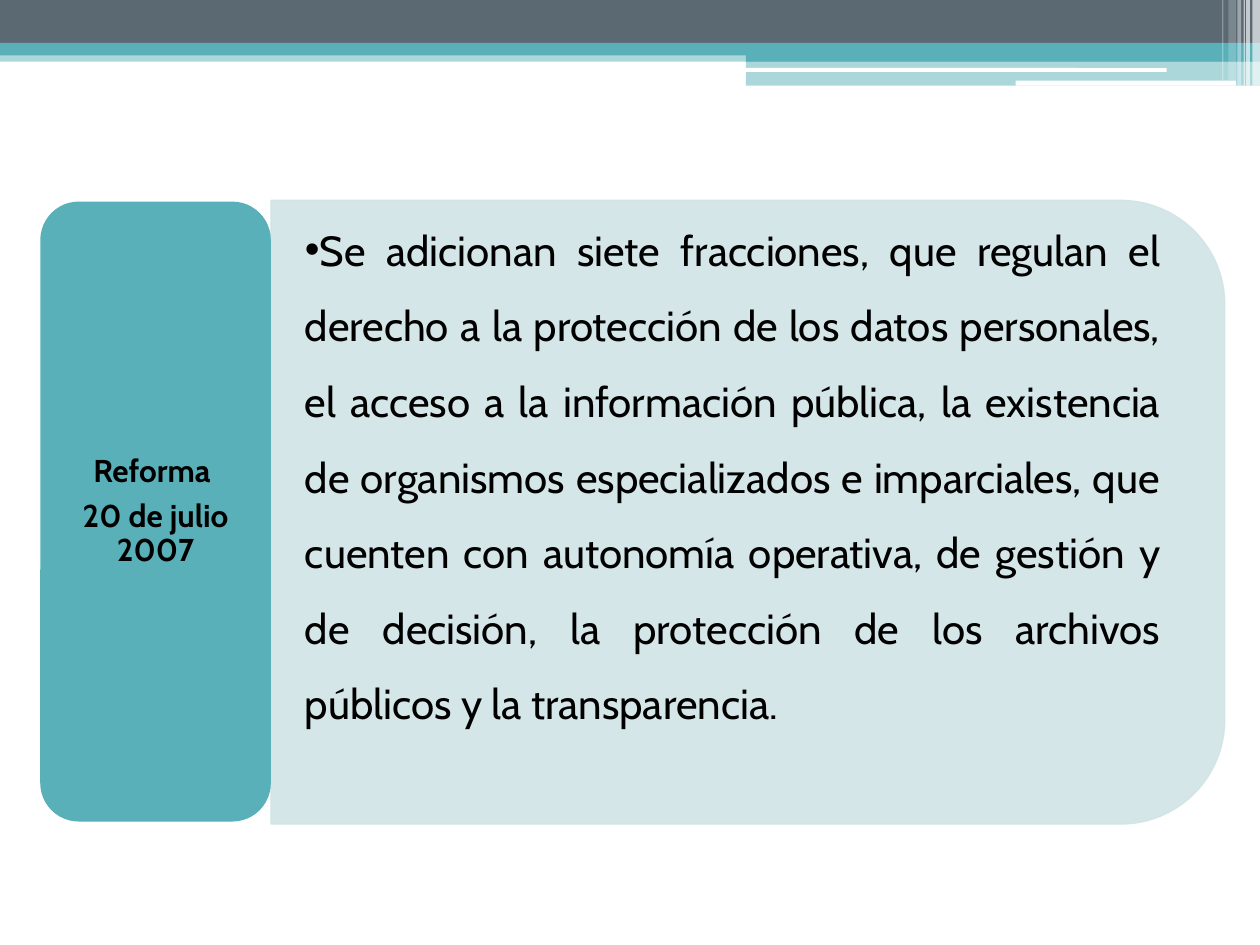
import pptx
import pptx.dml.color
import pptx.enum.shapes
import pptx.enum.text
import pptx.oxml.ns
import pptx.util
from lxml import etree

Inches = pptx.util.Inches
Pt = pptx.util.Pt
RGBColor = pptx.dml.color.RGBColor
Shape = pptx.enum.shapes.MSO_SHAPE
Anchor = pptx.enum.text.MSO_ANCHOR
Align = pptx.enum.text.PP_ALIGN
qn = pptx.oxml.ns.qn

SLATE = RGBColor(0x5B, 0x69, 0x73)
TEAL = RGBColor(0x59, 0xB0, 0xB9)
PALE_TEAL = RGBColor(0xD1, 0xE4, 0xE6)
WHITE = RGBColor(0xFF, 0xFF, 0xFF)
BLACK = RGBColor(0x00, 0x00, 0x00)

# Header: left, top, width, height, colour, opacity in percent
BANDS = [
    (0, 0.4, 10, 0.09, TEAL, 50),
    (0, 0, 10, 0.34, SLATE, 100),
    (0, 0.34, 10, 0.1, TEAL, 100),
    (5.92, 0.39, 4.08, 0.1, TEAL, 100),
    (5.92, 0.48, 4.08, 0.2, TEAL, 50),
]
WHITE_BARS = [(5.91, 0.54, 3.35, 0.03), (8.06, 0.64, 1.75, 0.04)]
# Stripes: left, width, height, opacity in percent
STRIPES = [
    (9.94, 0.06, 0.68, 65),
    (9.89, 0.03, 0.68, 65),
    (9.87, 0.01, 0.68, 60),
    (9.82, 0.03, 0.68, 40),
    (9.75, 0.06, 0.64, 20),
    (9.7, 0.01, 0.64, 30),
]

LABEL = ["Reforma ", "20 de julio 2007"]
BODY = (
    "Se adicionan siete fracciones, que regulan el derecho a la protección de "
    "los datos personales, el acceso a la información pública, la existencia de "
    "organismos especializados e imparciales, que cuenten con autonomía "
    "operativa, de gestión y de decisión, la protección de los archivos "
    "públicos y la transparencia."
)


def set_values(target, values):
    for name, value in values.items():
        setattr(target, name, value)


def set_opacity(fill_element, opacity):
    color = fill_element.find(".//" + qn("a:srgbClr"))
    etree.SubElement(color, qn("a:alpha")).set("val", str(opacity * 1000))


def add_block(slide, kind, left, top, width, height, color, opacity=100):
    shape = slide.shapes.add_shape(
        kind, Inches(left), Inches(top), Inches(width), Inches(height))
    shape.shadow.inherit = False
    shape.fill.solid()
    shape.fill.fore_color.rgb = color
    shape.line.fill.background()
    if opacity < 100:
        set_opacity(shape.element.spPr.find(qn("a:solidFill")), opacity)
    return shape


def format_frame(frame, anchor, horizontal, vertical):
    set_values(frame, {
        "word_wrap": True,
        "auto_size": pptx.enum.text.MSO_AUTO_SIZE.NONE,
        "vertical_anchor": anchor,
        "margin_left": Inches(horizontal),
        "margin_right": Inches(horizontal),
        "margin_top": Inches(vertical),
        "margin_bottom": Inches(vertical),
    })


def format_paragraph(paragraph, layout, size, bold=False):
    set_values(paragraph, layout)
    set_values(paragraph.font, {"name": "Cabin", "size": Pt(size), "bold": bold})
    paragraph.font.color.rgb = BLACK


def add_header(slide):
    for band in BANDS:
        add_block(slide, Shape.RECTANGLE, *band)
    for bar in WHITE_BARS:
        add_block(slide, Shape.ROUNDED_RECTANGLE, *bar, WHITE)
    for left, width, height, opacity in STRIPES:
        add_block(slide, Shape.RECTANGLE, left, 0, width, height, WHITE, opacity)


def add_panel(slide):
    panel = add_block(slide, Shape.ROUND_2_SAME_RECTANGLE,
                      3.46, 0.28, 4.95, 7.57, PALE_TEAL, 90)
    panel.rotation = 90
    panel.line.color.rgb = PALE_TEAL
    panel.line.width = Pt(0.75)
    set_opacity(panel.element.spPr.find(qn("a:ln")), 90)


def place_body(slide):
    body = slide.placeholders[1]
    # Bring the list in front of its panel
    body.element.getparent().append(body.element)
    set_values(body, {"left": Inches(2.15), "top": Inches(1.58),
                      "width": Inches(7.33), "height": Inches(4.46)})
    frame = body.text_frame
    format_frame(frame, Anchor.TOP, 0.27, 0)
    frame.text = BODY
    paragraph = frame.paragraphs[0]
    properties = paragraph._p.get_or_add_pPr()
    properties.set("marL", "0")
    properties.set("indent", "0")
    etree.SubElement(properties, qn("a:buChar")).set("char", "•")
    format_paragraph(paragraph, {"alignment": Align.JUSTIFY, "line_spacing": 1.5,
                                 "space_before": Pt(0)}, 24)


def add_label(slide):
    label = add_block(slide, Shape.ROUNDED_RECTANGLE, 0.32, 1.6, 1.83, 4.92, TEAL)
    frame = label.text_frame
    format_frame(frame, Anchor.MIDDLE, 0.07, 0.04)
    frame.text = "\n".join(LABEL)
    for paragraph in frame.paragraphs:
        format_paragraph(paragraph, {"alignment": Align.CENTER, "line_spacing": 0.9,
                                     "space_after": Pt(6.3)}, 18, bold=True)


def main():
    presentation = pptx.Presentation()
    presentation.slide_width = Inches(10)
    presentation.slide_height = Inches(7.5)
    slide = presentation.slides.add_slide(presentation.slide_layouts[1])
    title = slide.shapes.title.element
    title.getparent().remove(title)

    add_header(slide)
    add_panel(slide)
    place_body(slide)
    add_label(slide)
    presentation.save("out.pptx")


if __name__ == "__main__":
    main()
